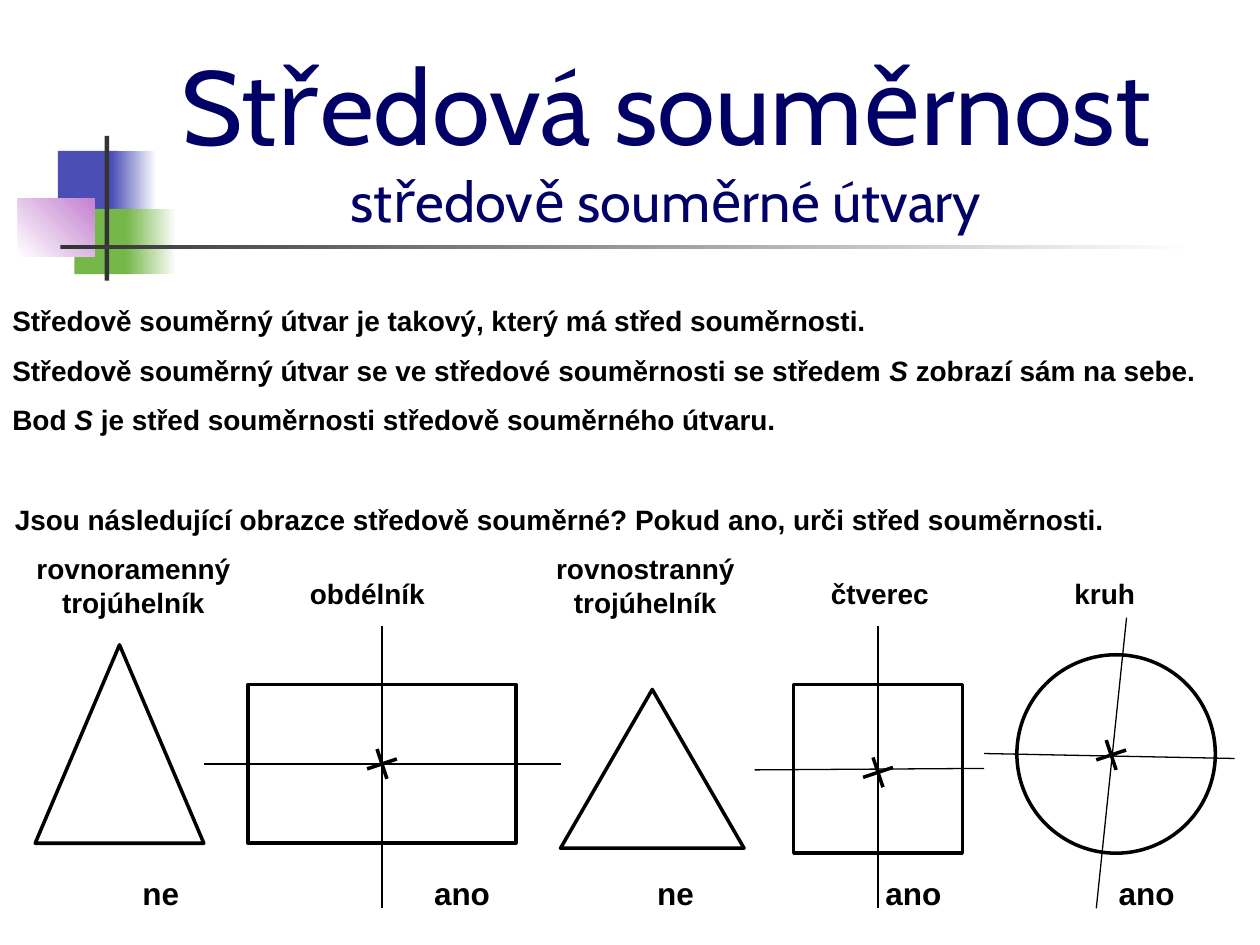
from pptx import Presentation
from pptx.dml.color import RGBColor
from pptx.enum.shapes import MSO_CONNECTOR, MSO_SHAPE
from pptx.enum.text import MSO_ANCHOR, MSO_AUTO_SIZE, PP_ALIGN
from pptx.oxml import parse_xml
from pptx.oxml.ns import nsdecls
from pptx.util import Cm, Pt

BLACK, NAVY, WHITE, GREY = "000000", "000066", "FFFFFF", "333333"
BLUE, GREEN, PINK = "4B4EB5", "76B749", "C481CF"


def tint(color, code):
    color.rgb = RGBColor.from_string(code)


def shape(slide, kind, x, y, w, h):
    item = slide.shapes.add_shape(kind, Cm(x), Cm(y), Cm(w), Cm(h))
    item.shadow.inherit = False
    return item


def block(slide, x, y, w, h, first, last=None, angle=0):
    item = shape(slide, MSO_SHAPE.RECTANGLE, x, y, w, h)
    item.line.fill.background()
    if last:
        item.fill.gradient()
        item.fill.gradient_angle = angle
        for stop, code in zip(item.fill.gradient_stops, (first, last)):
            tint(stop.color, code)
    else:
        item.fill.solid()
        tint(item.fill.fore_color, first)


def line(slide, x, y, end_x, end_y, width):
    item = slide.shapes.add_connector(
        MSO_CONNECTOR.STRAIGHT, Cm(x), Cm(y), Cm(end_x), Cm(end_y))
    tint(item.line.color, BLACK)
    item.line.width = Pt(width)
    item._element.spPr.append(parse_xml(f"<a:effectLst {nsdecls('a')}/>"))


def style(par, size, face="Arial", code=BLACK, bold=True):
    par.font.size = Pt(size)
    par.font.name = face
    par.font.bold = bold
    tint(par.font.color, code)


def text(slide, x, y, w, h, parts, size=16, align=PP_ALIGN.LEFT):
    frame = slide.shapes.add_textbox(Cm(x), Cm(y), Cm(w), Cm(h)).text_frame
    frame.word_wrap = True
    frame.auto_size = MSO_AUTO_SIZE.SHAPE_TO_FIT_TEXT
    par = frame.paragraphs[0]
    par.alignment = align
    style(par, size)
    for order, part in enumerate(parts):
        run = par.add_run()
        run.text = part
        if order % 2:
            run.font.italic = True


def motif(slide, x, y):
    for dx, dy, w, h, *paint in (
        (0.81, 0.3, 1.22, 1.32, BLUE),
        (1.88, 0.3, 0.91, 1.32, BLUE, WHITE),
        (1.14, 1.47, 1.17, 1.32, GREEN),
        (2.18, 1.47, 1.02, 1.32, GREEN, WHITE),
        (0, 1.27, 1.55, 1.17, WHITE, PINK, 45),
        (1.75, 0, 0.09, 2.92, GREY),
        (0.86, 2.2, 22.86, 0.09, GREY, WHITE),
    ):
        block(slide, x + dx, y + dy, w, h, *paint)


def title(slide, x, y, w, h):
    frame = slide.shapes.add_textbox(Cm(x), Cm(y), Cm(w), Cm(h)).text_frame
    frame.word_wrap = True
    frame.vertical_anchor = MSO_ANCHOR.MIDDLE
    frame.text = "Středová souměrnost\nstředově souměrné útvary"
    for par, size in zip(frame.paragraphs, (60, 32)):
        par.alignment = PP_ALIGN.CENTER
        style(par, size, "Cabin", NAVY, False)


def theory(slide, x, y, w):
    rows = (
        ["Středově souměrný útvar je takový, který má střed souměrnosti."],
        ["Středově souměrný útvar se ve středové souměrnosti se středem ",
         "S", " zobrazí sám na sebe."],
        ["Bod ", "S", " je střed souměrnosti středově souměrného útvaru."],
    )
    for order, parts in enumerate(rows):
        text(slide, x, y + order, w, 0.94, parts)


def figure(slide, box, kind, label, answer, axes=(), mark=None):
    x, y, w, h = box
    item = shape(slide, kind, x, y, w, h)
    item.fill.background()
    tint(item.line.color, BLACK)
    item.line.width = Pt(2)
    name, shift, wide = label
    if " " in name:
        text(slide, x + shift, 11, wide, 1.62, [name], align=PP_ALIGN.CENTER)
    else:
        text(slide, x + shift, 11.5, wide, 0.94, [name])
    reply, shift = answer
    text(slide, x + shift, 17.5, 2, 1.02, [reply], 18)
    for x1, y1, x2, y2 in axes:
        line(slide, x + x1, y + y1, x + x2, y + y2, 0.75)
    if mark:
        mx, my = x + mark[0], y + mark[1]
        for dx, dy in ((0.1, 0.3), (0.3, -0.1)):
            line(slide, mx - dx, my - dy, mx + dx, my + dy, 2)


def task(slide):
    text(slide, 0.05, 10, 25.4, 0.94, [
        "Jsou následující obrazce středově souměrné? "
        "Pokud ano, urči střed souměrnosti."])
    figure(slide, (0.71, 13, 3.4, 4), MSO_SHAPE.ISOSCELES_TRIANGLE,
           ("rovnoramenný trojúhelník", -0.23, 4.42), ("ne", 1.91))
    figure(slide, (5, 13.8, 5.4, 3.2), MSO_SHAPE.RECTANGLE,
           ("obdélník", 1, 4.42), ("ano", 3.5),
           ((-0.89, 1.6, 6.3, 1.6), (2.7, -1.18, 2.7, 4.51)), (2.7, 1.6))
    figure(slide, (11.3, 13.9, 3.7, 3.2), MSO_SHAPE.ISOSCELES_TRIANGLE,
           ("rovnostranný trojúhelník", -0.5, 4.42), ("ne", 1.7))
    figure(slide, (16, 13.8, 3.4, 3.4), MSO_SHAPE.RECTANGLE,
           ("čtverec", 0.5, 3.33), ("ano", 1.6),
           ((-0.79, 1.72, 3.84, 1.69), (1.7, -1.18, 1.7, 4.51)), (1.7, 1.77))
    figure(slide, (20.5, 13.2, 4, 4), MSO_SHAPE.OVAL,
           ("kruh", 0.91, 2.62), ("ano", 1.8),
           ((2.21, -0.75, 1.6, 5.11), (-0.66, 1.99, 4.39, 2.09)), (1.9, 2.02))


def main():
    deck = Presentation()
    deck.slide_width, deck.slide_height = Cm(25.4), Cm(19.05)
    slide = deck.slides.add_slide(deck.slide_layouts[6])
    motif(slide, 0.36, 2.74)
    title(slide, 1.96, 0.74, 22.94, 4.06)
    theory(slide, 0, 6, 25.4)
    task(slide)
    deck.save("out.pptx")


if __name__ == "__main__":
    main()
